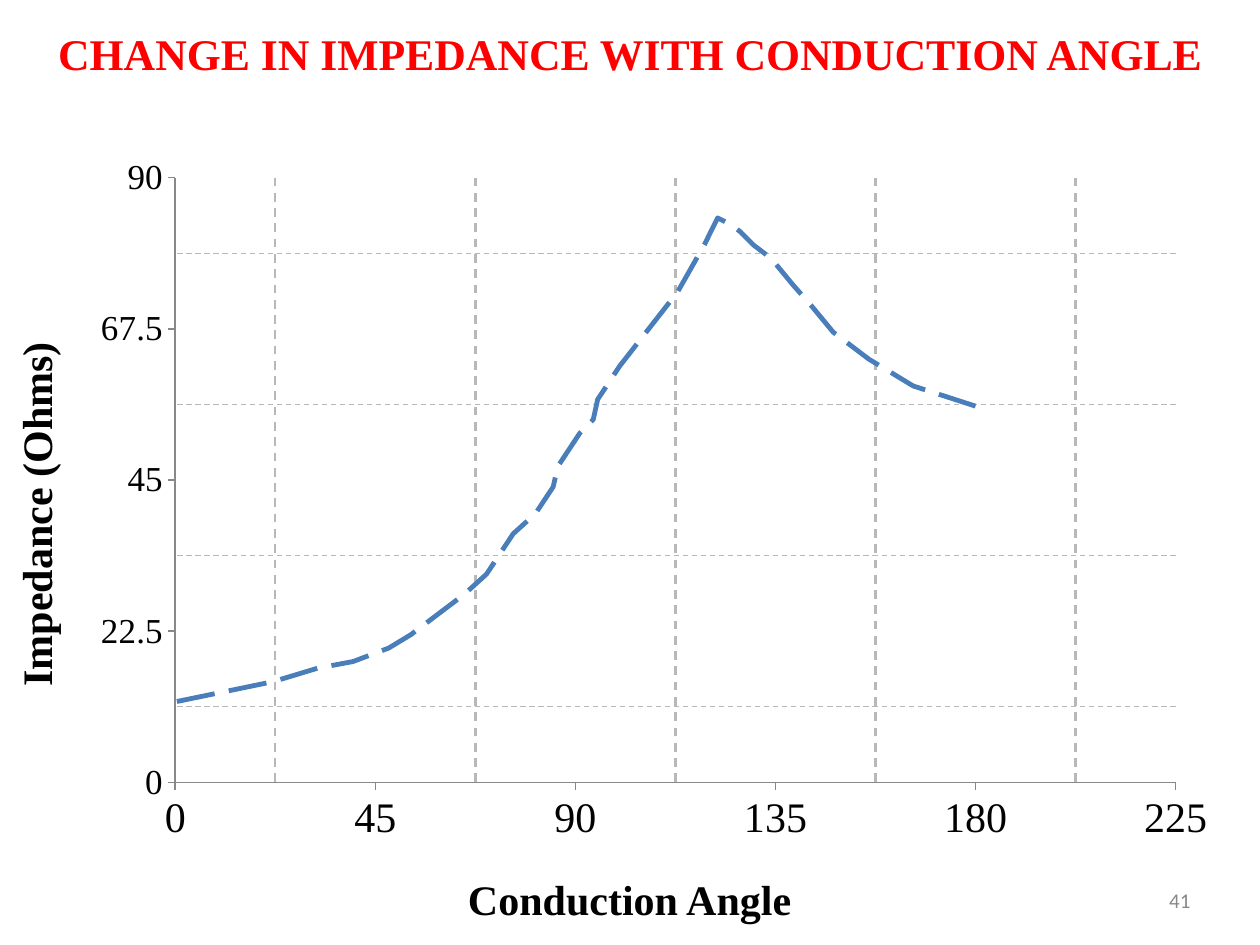
"""Build the slide on impedance against conduction angle."""
from copy import deepcopy
from dataclasses import dataclass

from lxml import etree
from pptx import Presentation
from pptx import util as u
from pptx.chart.data import XyChartData
from pptx.dml.color import RGBColor
from pptx.enum import chart as ch, dml, text
from pptx.oxml.ns import qn


@dataclass(frozen=True)
class Theme:
    """Colours, fonts and type sizes of the slide."""
    serif: str = "Times New Roman"
    sans: str = "Calibri"
    red: str = "FF0000"
    ink: str = "000000"
    grey: str = "888888"
    grid: str = "B8B8B8"
    curve: str = "4A7EBB"
    title: float = 25
    label: float = 24
    ticks: float = 20
    number: float = 12


THEME = Theme()
CURVE = [
    (180, 56), (166, 59), (156, 63), (148, 67), (143, 71), (139, 74), (134, 78),
    (130, 80), (127, 82), (125, 83), (122, 84), (119, 80), (113, 73), (100, 62),
    (95, 57), (94, 54), (91, 52), (88, 49), (86, 47), (85, 44), (81, 40), (76, 37),
    (70, 31), (65, 28), (59, 25), (53, 22), (48, 20), (40, 18), (32, 17), (22, 15),
    (0, 12),
]


def style_font(font, size, color, name=THEME.serif, bold=False):
    """Set face, size, weight and colour of a font."""
    font.name, font.size, font.bold = name, u.Pt(size), bold
    font.color.rgb = RGBColor.from_string(color)


def style_line(line, color, width, dash=None):
    """Set colour, width and dash of a line."""
    line.color.rgb = RGBColor.from_string(color)
    line.width = u.Pt(width)
    if dash:
        line.dash_style = dash


def add_text(page, words, place, size, color=THEME.ink, name=THEME.serif, bold=True,
             align=text.PP_ALIGN.LEFT, anchor=text.MSO_ANCHOR.TOP, wrap=True, turn=0):
    """Add a text box with one paragraph."""
    box = page.shapes.add_textbox(*map(u.Cm, place))
    box.rotation = turn
    frame = box.text_frame
    frame.word_wrap, frame.vertical_anchor = wrap, anchor
    frame.margin_left = frame.margin_right = u.Cm(0.13)
    frame.margin_top = frame.margin_bottom = u.Cm(0.13)
    para = frame.paragraphs[0]
    para.alignment = align
    span = para.add_run()
    span.text = words
    style_font(span.font, size, color, name, bold)


def draw_minor_grid(axis, width):
    """Show dashed minor gridlines, styled by way of the major ones."""
    axis.has_major_gridlines = axis.has_minor_gridlines = True
    style_line(axis.major_gridlines.format.line, THEME.grid, width, dml.MSO_LINE.DASH)
    major, minor = (axis._element.find(qn(f"c:{rank}Gridlines"))
                    for rank in ("major", "minor"))
    minor.append(deepcopy(major.find(qn("c:spPr"))))
    axis.has_major_gridlines = False


def style_axis(axis, top, step, size, grid_width):
    """Scale an axis and draw gridlines midway between its ticks."""
    axis.minimum_scale, axis.maximum_scale, axis.major_unit = 0, top, step
    axis.minor_unit = step / 2
    draw_minor_grid(axis, grid_width)
    axis.major_tick_mark = ch.XL_TICK_MARK.OUTSIDE
    axis.minor_tick_mark = ch.XL_TICK_MARK.NONE
    axis.tick_labels.number_format = "General"
    axis.tick_labels.number_format_is_linked = False
    style_font(axis.tick_labels.font, size, THEME.ink)
    style_line(axis.format.line, THEME.grey, 1)


def place_plot(chart, **share):
    """Fix the inner plot area as shares of the chart frame."""
    area = chart.plots[0]._element.getparent()
    for old in area.findall(qn("c:layout")):
        area.remove(old)
    layout = etree.Element(qn("c:layout"))
    manual = etree.SubElement(layout, qn("c:manualLayout"))
    modes = {"layoutTarget": "inner", "xMode": "edge", "yMode": "edge"}
    for tag, value in {**modes, **share}.items():
        etree.SubElement(manual, qn(f"c:{tag}")).set("val", str(value))
    area.insert(0, layout)


def add_curve(page, points, place):
    """Add the scatter chart with its dashed curve."""
    data = XyChartData()
    series = data.add_series("Series 1")
    for angle, impedance in points:
        series.add_data_point(angle, impedance)
    chart = page.shapes.add_chart(ch.XL_CHART_TYPE.XY_SCATTER_LINES_NO_MARKERS,
                                  *map(u.Cm, place), data).chart
    chart.has_legend = chart.has_title = False
    style_font(chart.font, 10, THEME.ink, THEME.sans)
    chart.plots[0].vary_by_categories = False
    curve = chart.plots[0].series[0]
    curve.smooth = False
    curve.marker.style = ch.XL_MARKER_STYLE.NONE
    style_line(curve.format.line, THEME.curve, 2.75, dml.MSO_LINE.LONG_DASH)
    style_axis(chart.category_axis, 225, 45, THEME.label, 1.25)
    style_axis(chart.value_axis, 90, 22.5, THEME.ticks, 0.75)
    place_plot(chart, x=0.085, y=0.062, w=0.886, h=0.829)


def main():
    """Build and save the deck."""
    deck = Presentation()
    deck.slide_width, deck.slide_height = u.Cm(25.4), u.Cm(19.05)
    page = deck.slides.add_slide(deck.slide_layouts[6])
    add_text(page, "CHANGE IN IMPEDANCE WITH CONDUCTION ANGLE", (0, 0.03, 25.4, 2.08),
             THEME.title, THEME.red, align=text.PP_ALIGN.CENTER,
             anchor=text.MSO_ANCHOR.MIDDLE)
    add_text(page, "41", (23.39, 17.78, 0.74, 0.74), THEME.number, THEME.grey,
             THEME.sans, bold=False, align=text.PP_ALIGN.RIGHT,
             anchor=text.MSO_ANCHOR.MIDDLE, wrap=False)
    add_curve(page, CURVE, (1.6, 2.67, 22.76, 14.71))
    add_text(page, "Impedance (Ohms)", (-3, 9.42, 7.62, 1.47), THEME.label, turn=270)
    add_text(page, "Conduction Angle", (8.89, 17.48, 7.19, 1.17), THEME.label,
             align=text.PP_ALIGN.RIGHT)
    deck.save("out.pptx")


if __name__ == "__main__":
    main()
